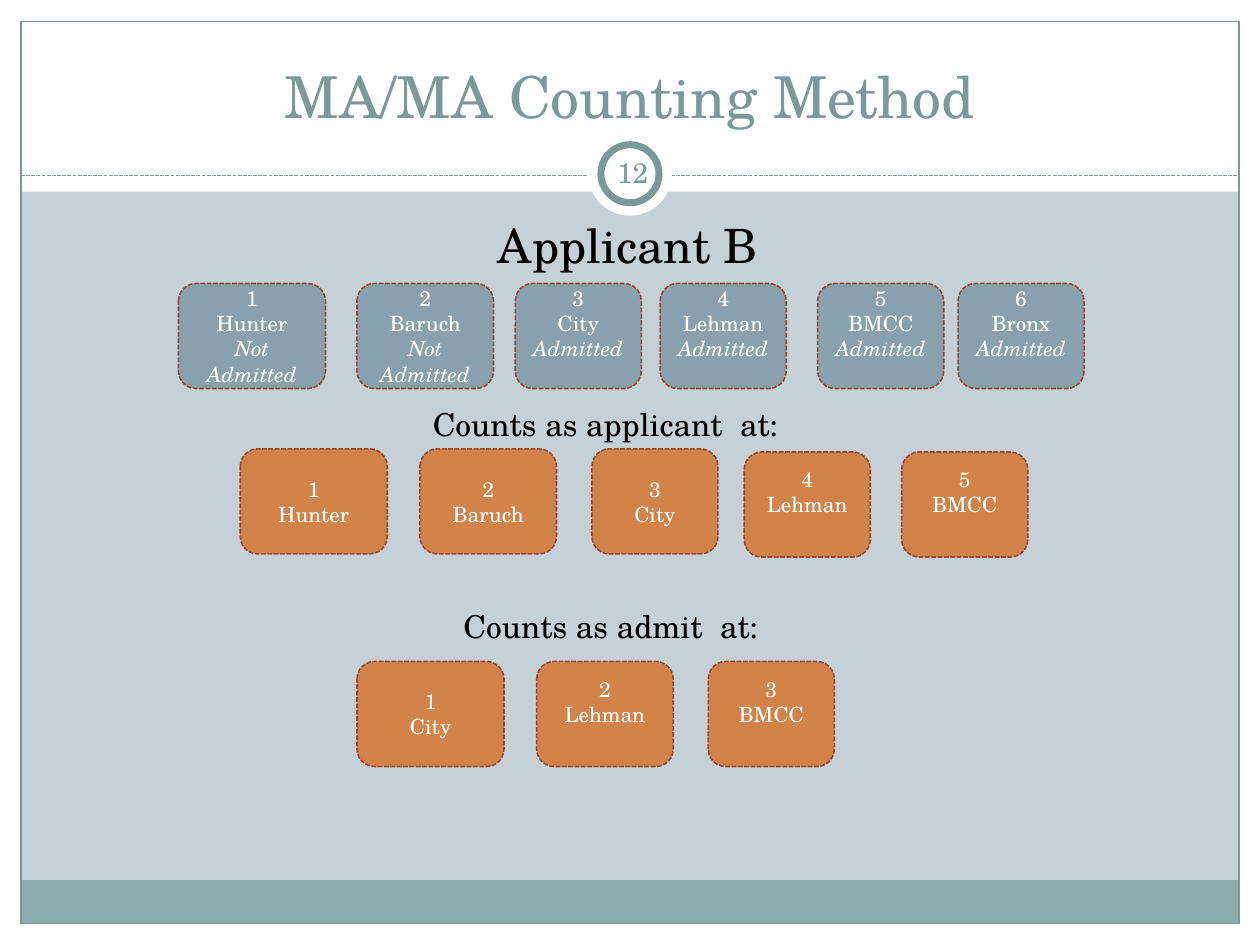
from dataclasses import dataclass

from lxml import etree
from pptx import Presentation
from pptx.dml.color import RGBColor
from pptx.enum.dml import MSO_LINE
from pptx.enum.shapes import MSO_CONNECTOR, MSO_SHAPE
from pptx.enum.text import MSO_ANCHOR, MSO_AUTO_SIZE, PP_ALIGN
from pptx.oxml.ns import qn
from pptx.util import Pt

RECTANGLE, ELLIPSE = MSO_SHAPE.RECTANGLE, MSO_SHAPE.OVAL
ROUNDED = MSO_SHAPE.ROUNDED_RECTANGLE
TOP, MIDDLE, BOTTOM = MSO_ANCHOR.TOP, MSO_ANCHOR.MIDDLE, MSO_ANCHOR.BOTTOM
CENTER, DASHED = PP_ALIGN.CENTER, MSO_LINE.SQUARE_DOT
NO_FIT = MSO_AUTO_SIZE.NONE


@dataclass(frozen=True)
class Theme:
    font: str = "TeX Gyre Schola"
    background: str = "C5D1D7"
    white: str = "FFFFFF"
    black: str = "000000"
    accent: str = "7C999A"
    footer: str = "8CADAE"
    choice: str = "88A1AD"
    counted: str = "D18349"
    card_line: str = "9B4936"
    title_size: float = 33
    heading_size: float = 27
    label_size: float = 18
    number_size: float = 16
    card_size: float = 12


@dataclass(frozen=True)
class Box:
    left: float
    top: float
    width: float
    height: float

    def lengths(self) -> list:
        return [Pt(v) for v in (self.left, self.top, self.width, self.height)]


@dataclass(frozen=True)
class Card:
    left: float
    top: float
    lines: tuple[str, ...]
    status: str = ""
    raised: bool = False


THEME = Theme()
CARD_WIDTHS = (84, 78, 72, 72, 72, 72)
CARD_HEIGHT = 60
RAISED_INSET = 18  # bottom inset that lifts the text by half a line

CHOICES = (
    Card(102, 162, ("1", "Hunter"), "Not Admitted"),
    Card(204, 162, ("2", "Baruch"), "Not Admitted"),
    Card(294.5, 162, ("3", "City"), "Admitted", True),
    Card(377.3, 162, ("4 Lehman",), "Admitted", True),
    Card(467.3, 162, ("5", "BMCC"), "Admitted", True),
    Card(547.5, 162, ("6", "Bronx"), "Admitted", True),
)
APPLICANTS = (
    Card(137.3, 256.5, ("1", "Hunter")),
    Card(240, 256.5, ("2", "Baruch")),
    Card(338.3, 256.5, ("3", "City")),
    Card(425.3, 258.3, ("4 Lehman",), raised=True),
    Card(515.3, 258.3, ("5", "BMCC"), raised=True),
)
ADMITS = (
    Card(204, 378, ("1", "City")),
    Card(306.7, 378, ("2", "Lehman"), raised=True),
    Card(404.8, 378, ("3", "BMCC"), raised=True),
)
ROWS = ((CHOICES, THEME.choice), (APPLICANTS, THEME.counted), (ADMITS, THEME.counted))


def color(value: str) -> RGBColor:
    return RGBColor.from_string(value)


def set_line(line, line_color: str, width: float, dash=None) -> None:
    line.color.rgb = color(line_color)
    for name, value in {"width": Pt(width), "dash_style": dash}.items():
        setattr(line, name, value)


def add_shape(slide, kind, box: Box, fill: str = "", line: str = "",
              width: float = 0.75, dash=None):
    shape = slide.shapes.add_shape(kind, *box.lengths())
    shape.shadow.inherit = False
    if fill:
        shape.fill.solid()
        shape.fill.fore_color.rgb = color(fill)
    else:
        shape.fill.background()
    if line:
        set_line(shape.line, line, width, dash)
    else:
        shape.line.fill.background()
    return shape


def write(shape, lines, size: float, text_color: str, anchor=TOP,
          italic_line: str = "", **frame_format) -> None:
    """Fill a shape with centred paragraphs; italic_line follows the others."""
    frame = shape.text_frame
    settings = {"word_wrap": True, "auto_size": NO_FIT, "vertical_anchor": anchor}
    for name, value in (settings | frame_format).items():
        setattr(frame, name, value)
    texts = [*lines, italic_line] if italic_line else list(lines)
    for index, text in enumerate(texts):
        paragraph = frame.paragraphs[0] if index == 0 else frame.add_paragraph()
        paragraph.alignment = CENTER
        run = paragraph.add_run()
        run.text = text
        font_format = {"name": THEME.font, "size": Pt(size),
                       "italic": index == len(lines)}
        for name, value in font_format.items():
            setattr(run.font, name, value)
        run.font.color.rgb = color(text_color)


def add_label(slide, box: Box, text: str, size: float, text_color: str, **options) -> None:
    write(slide.shapes.add_textbox(*box.lengths()), [text], size, text_color, **options)


def add_card(slide, card: Card, width: float, fill: str) -> None:
    shape = add_shape(slide, ROUNDED, Box(card.left, card.top, width, CARD_HEIGHT),
                      fill, THEME.card_line, 0.9, DASHED)
    inset = RAISED_INSET if card.raised else 3.6
    write(shape, card.lines, THEME.card_size, THEME.white, MIDDLE, card.status,
          margin_bottom=Pt(inset))


def add_backdrop(slide) -> None:
    slide.background.fill.solid()
    slide.background.fill.fore_color.rgb = color(THEME.background)
    for edge in (Box(0, 528, 720, 12), Box(0, 0, 720, 109.5),
                 Box(0, 0, 12, 540), Box(708, 0, 12, 540)):
        add_shape(slide, RECTANGLE, edge, THEME.white)
    add_shape(slide, RECTANGLE, Box(11.8, 503, 696, 24.5), THEME.footer)
    add_shape(slide, RECTANGLE, Box(12, 12.2, 696, 515.5), line=THEME.accent)
    divider = slide.shapes.add_connector(
        MSO_CONNECTOR.STRAIGHT, Pt(12), Pt(100.5), Pt(708), Pt(100.5))
    set_line(divider.line, THEME.accent, 0.75, DASHED)
    etree.SubElement(divider._element.spPr, qn("a:effectLst"))
    add_shape(slide, ELLIPSE, Box(336, 75.3, 48, 48), THEME.white)
    add_shape(slide, ELLIPSE, Box(343.4, 82.7, 33.2, 33.2), THEME.white, THEME.accent, 4)


def place_placeholder(slide, placeholder, box: Box) -> None:
    """Position a placeholder and bring it in front of the backdrop."""
    for name, value in zip(("left", "top", "width", "height"), box.lengths()):
        setattr(placeholder, name, value)
    slide.shapes._spTree.append(placeholder._element)


def remove_bullet(paragraph) -> None:
    properties = paragraph._p.get_or_add_pPr()
    for name in ("marL", "indent"):
        properties.set(name, "0")
    etree.SubElement(properties, qn("a:buNone"))


def main() -> None:
    presentation = Presentation()
    presentation.slide_width, presentation.slide_height = Pt(720), Pt(540)
    slide = presentation.slides.add_slide(presentation.slide_layouts[1])
    title, body = slide.shapes.title, slide.placeholders[1]

    add_backdrop(slide)
    place_placeholder(slide, title, Box(24, 18, 672, 60))
    write(title, ["MA/MA Counting Method"], THEME.title_size, THEME.accent, BOTTOM)
    margins = {f"margin_{side}": Pt(3.6) for side in ("left", "top", "right", "bottom")}
    add_label(slide, Box(343.5, 81, 36, 34.5), "12", THEME.number_size, THEME.accent,
              anchor=MIDDLE, **margins)
    place_placeholder(slide, body, Box(24, 120, 669.6, 384))
    write(body, ["Applicant B"], THEME.heading_size, THEME.black)
    remove_bullet(body.text_frame.paragraphs[0])

    for cards, fill in ROWS:
        for card, width in zip(cards, CARD_WIDTHS):
            add_card(slide, card, width, fill)
    for left, top, text in ((192, 228, "Counts as applicant  at:"),
                            (195, 343.5, "Counts as admit  at:")):
        add_label(slide, Box(left, top, 308, 29), text, THEME.label_size, THEME.black)

    presentation.save("out.pptx")


if __name__ == "__main__":
    main()
